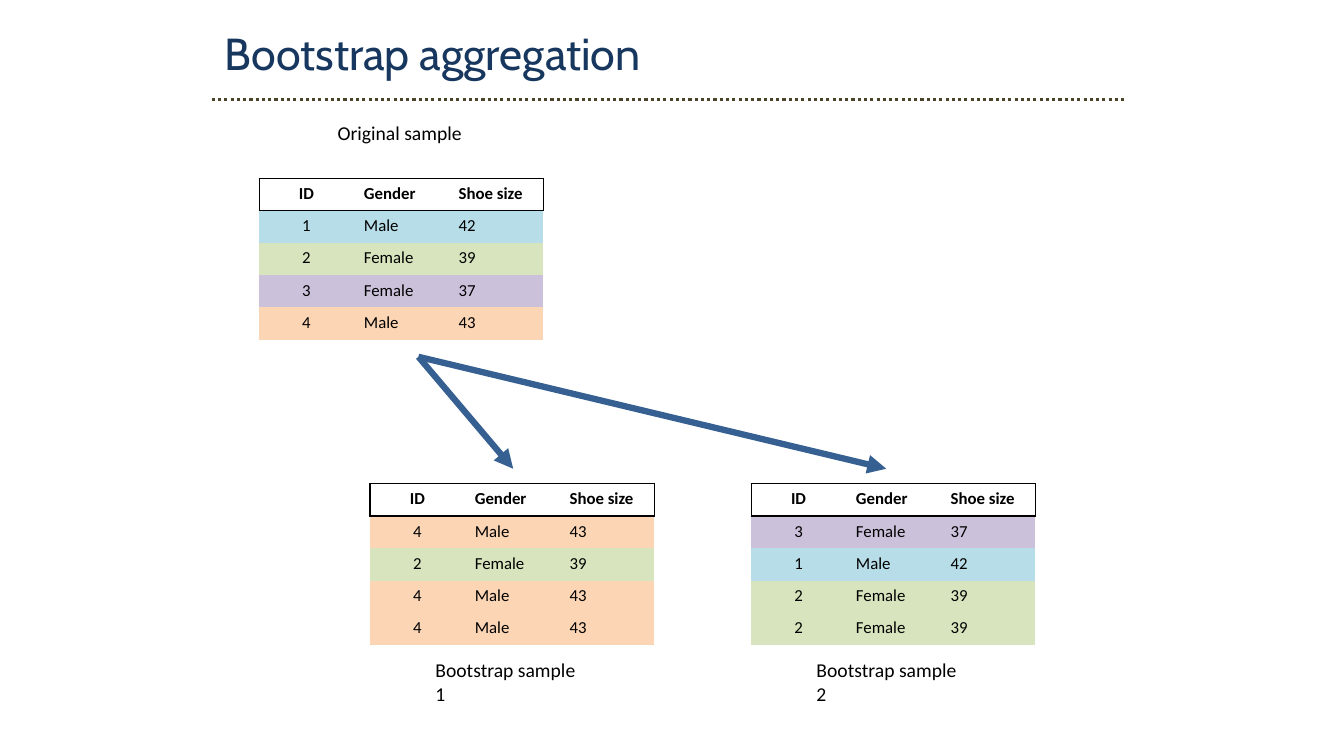
from lxml.etree import SubElement as Sub
from pptx import Presentation
from pptx.dml.color import RGBColor
from pptx.enum.dml import MSO_LINE
from pptx.enum.shapes import MSO_CONNECTOR as Conn
from pptx.enum.text import PP_ALIGN as Align
from pptx.oxml.ns import qn
from pptx.util import Inches, Pt

BLACK, NAVY, BLUE, BROWN = "000000", "17375E", "376092", "4A452A"
NO_STYLE = "{2D5ABB26-0587-4C30-8999-92F81FD0307C}"
HEAD = ("ID", "Gender", "Shoe size")
# ID: gender, shoe size, row colour
PEOPLE = {
    1: ("Male", "42", "B7DEE8"),
    2: ("Female", "39", "D7E4BD"),
    3: ("Female", "37", "CCC1DA"),
    4: ("Male", "43", "FCD5B5"),
}
# table left and top, IDs drawn
TABLES = [
    (2.57, 1.77, (1, 2, 3, 4)),
    (3.67, 4.8, (4, 2, 4, 4)),
    (7.45, 4.8, (3, 1, 2, 2)),
]
# text, left, top, width, height, wrap, size, font, colour
TEXTS = [
    ("Bootstrap aggregation", 2.13, 0.21, 8.79, 0.64, True, 32, "Cabin", NAVY),
    ("Original sample", 3.25, 1.15, 1.46, 0.34, False, 14, "Calibri", BLACK),
    ("Bootstrap sample 1", 4.22, 6.48, 1.7, 0.34, True, 14, "Calibri", BLACK),
    ("Bootstrap sample 2", 8, 6.48, 1.7, 0.34, True, 14, "Calibri", BLACK),
]
# start, end, colour, width, arrow
LINES = [
    ((2.1, 0.99), (11.16, 0.99), BROWN, 2.25, False),
    ((4.15, 3.54), (5.09, 4.65), BLUE, 4.5, True),
    ((4.15, 3.54), (8.79, 4.65), BLUE, 4.5, True),
]


def rgb(code):
    return RGBColor.from_string(code)


def style(para, size, face, color, bold=False):
    font = para.font
    font.size, font.name, font.bold = Pt(size), face, bold
    font.color.rgb = rgb(color)


prs = Presentation()
prs.slide_width, prs.slide_height = Inches(13.33), Inches(7.5)
shapes = prs.slides.add_slide(prs.slide_layouts[6]).shapes

for text, left, top, width, height, wrap, size, face, color in TEXTS:
    box = shapes.add_textbox(Inches(left), Inches(top), Inches(width), Inches(height))
    frame = box.text_frame
    frame.word_wrap = wrap
    frame.text = text
    style(frame.paragraphs[0], size, face, color)

for left, top, drawn in TABLES:
    rows = [(*HEAD, "FFFFFF")] + [(str(num), *PEOPLE[num]) for num in drawn]
    table = shapes.add_table(len(rows), len(HEAD), Inches(left), Inches(top),
                             Inches(2.82), Inches(1.6)).table
    table.horz_banding = False
    table._tbl.tblPr.find(qn("a:tableStyleId")).text = NO_STYLE
    for r, (*words, color) in enumerate(rows):
        for c, word in enumerate(words):
            cell = table.cell(r, c)
            cell.text = word
            para = cell.text_frame.paragraphs[0]
            para.alignment = Align.CENTER if c == 0 else Align.LEFT
            style(para, 12, "Calibri", BLACK, bold=r == 0)
            if r == 0:
                # the header is framed as one box
                for side in ("L", "", "R")[c] + "TB":
                    edge = Sub(cell._tc.get_or_add_tcPr(), qn("a:ln" + side), w=str(Pt(1)))
                    Sub(Sub(edge, qn("a:solidFill")), qn("a:srgbClr"), val=BLACK)
            cell.fill.solid()
            cell.fill.fore_color.rgb = rgb(color)

for start, end, color, width, arrow in LINES:
    link = shapes.add_connector(Conn.STRAIGHT, *map(Inches, start + end))
    link.line.color.rgb = rgb(color)
    link.line.width = Pt(width)
    if arrow:
        Sub(link.line._get_or_add_ln(), qn("a:tailEnd"), type="triangle")
    else:
        link.line.dash_style = MSO_LINE.ROUND_DOT
    Sub(link._element.spPr, qn("a:effectLst"))

prs.save("out.pptx")
